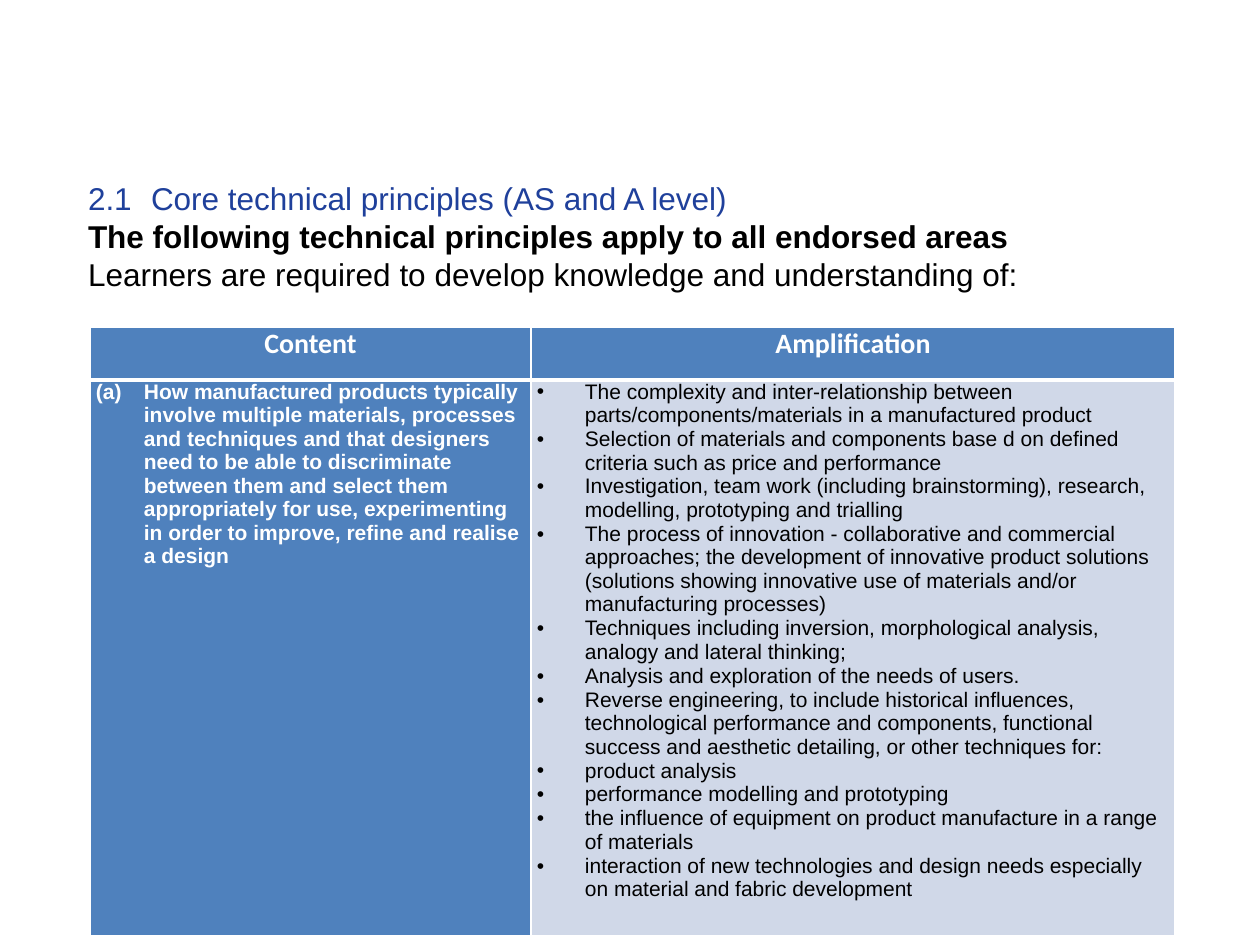
from dataclasses import dataclass

from lxml.etree import SubElement
from pptx import Presentation
from pptx.dml.color import RGBColor
from pptx.enum.text import MSO_ANCHOR, MSO_AUTO_SIZE, PP_ALIGN
from pptx.oxml.ns import qn
from pptx.util import Emu, Pt


@dataclass(frozen=True)
class Theme:
    white: str = "FFFFFF"
    black: str = "000000"
    heading: str = "1F409B"
    blue: str = "4F81BD"
    pale: str = "D0D8E8"
    body_font: str = "Arial"
    header_font: str = "Calibri"
    title_size: int = 18
    header_size: int = 16
    body_size: int = 12


@dataclass(frozen=True)
class TextStyle:
    font: str
    size: int
    color: str
    bold: bool = False
    align: PP_ALIGN = PP_ALIGN.LEFT
    spacing: float = 0
    bullet: tuple[str, str, str] | None = None


@dataclass(frozen=True)
class CellContent:
    lines: list[str]
    style: TextStyle
    fill: str
    top_border: int
    bottom_border: int


THEME = Theme()
BULLET_INDENT = 48
HEADER = TextStyle(THEME.header_font, THEME.header_size, THEME.white, True, PP_ALIGN.CENTER, 2)
CONTENT = TextStyle(THEME.body_font, THEME.body_size, THEME.white, True, spacing=0.1,
                    bullet=("a:buAutoNum", "type", "alphaLcParenBoth"))
AMPLIFICATION = TextStyle(THEME.body_font, THEME.body_size, THEME.black, spacing=0.1,
                          bullet=("a:buChar", "char", "•"))

TITLE_LINES = [
    ("2.1\tCore technical principles (AS and A level)", THEME.heading, False),
    ("The following technical principles apply to all endorsed areas", THEME.black, True),
    ("Learners are required to develop knowledge and understanding of:", THEME.black, False),
]
CONTENT_LINES = [
    "How manufactured products typically involve multiple materials, processes and techniques "
    "and that designers need to be able to discriminate between them and select them "
    "appropriately for use, experimenting in order to improve, refine and realise a design",
]
AMPLIFICATION_LINES = [
    "The complexity and inter-relationship between parts/components/materials in a "
    "manufactured product",
    "Selection of materials and components base d on defined criteria such as price and "
    "performance",
    "Investigation, team work (including brainstorming), research, modelling, prototyping "
    "and trialling",
    "The process of innovation - collaborative and commercial approaches; the development of "
    "innovative product solutions (solutions showing innovative use of materials and/or "
    "manufacturing processes)",
    "Techniques including inversion, morphological analysis, analogy and lateral thinking;",
    "Analysis and exploration of the needs of users.",
    "Reverse engineering, to include historical influences, technological performance and "
    "components, functional success and aesthetic detailing, or other techniques for:",
    "product analysis",
    "performance modelling and prototyping",
    "the influence of equipment on product manufacture in a range of materials",
    "interaction of new technologies and design needs especially on material and fabric "
    "development",
]
COLUMN_WIDTHS = [441, 644]
ROW_HEIGHTS = [53, 556]
ROWS = [
    [CellContent([label], HEADER, THEME.blue, 1, 3) for label in ("Content", "Amplification")],
    [CellContent(CONTENT_LINES, CONTENT, THEME.blue, 3, 1),
     CellContent(AMPLIFICATION_LINES, AMPLIFICATION, THEME.pale, 3, 1)],
]


def px(length: int) -> Emu:
    """Convert pixels, 126 to the inch, to EMU."""
    return Emu(round(length * 914400 / 126))


def write_lines(text_frame, lines: list[tuple[str, TextStyle]]) -> None:
    for index, (text, style) in enumerate(lines):
        paragraph = text_frame.paragraphs[0] if index == 0 else text_frame.add_paragraph()
        paragraph.text = text
        paragraph.alignment = style.align
        paragraph.space_before = Pt(style.spacing if index or style is HEADER else 0)
        paragraph.space_after = Pt(style.spacing)
        if style.bullet:
            add_bullet(paragraph, *style.bullet)
        paragraph.font.name = style.font
        paragraph.font.size = Pt(style.size)
        paragraph.font.bold = style.bold
        paragraph.font.color.rgb = RGBColor.from_string(style.color)


def add_bullet(paragraph, tag: str, attribute: str, value: str) -> None:
    properties = paragraph._p.get_or_add_pPr()
    properties.set("marL", str(px(BULLET_INDENT)))
    properties.set("indent", str(-px(BULLET_INDENT)))
    SubElement(properties, qn("a:buFont")).set("typeface", THEME.body_font)
    SubElement(properties, qn(tag)).set(attribute, value)


def add_borders(cell, top: int, bottom: int) -> None:
    properties = cell._tc.get_or_add_tcPr()
    for side, width in (("L", 1), ("R", 1), ("T", top), ("B", bottom)):
        line = SubElement(properties, qn(f"a:ln{side}"), w=str(Pt(width)))
        fill = SubElement(line, qn("a:solidFill"))
        SubElement(fill, qn("a:srgbClr"), val=THEME.white)


def fill_cell(cell, content: CellContent) -> None:
    cell.margin_left = cell.margin_right = px(6)
    cell.margin_top = cell.margin_bottom = 0
    cell.vertical_anchor = MSO_ANCHOR.TOP
    add_borders(cell, content.top_border, content.bottom_border)
    cell.fill.solid()
    cell.fill.fore_color.rgb = RGBColor.from_string(content.fill)
    write_lines(cell.text_frame, [(line, content.style) for line in content.lines])


def add_title(slide) -> None:
    title = slide.shapes.title
    title.left, title.top, title.width, title.height = px(76), px(173), px(1100), px(164)
    text_frame = title.text_frame
    text_frame.word_wrap = True
    text_frame.auto_size = MSO_AUTO_SIZE.NONE
    text_frame.vertical_anchor = MSO_ANCHOR.TOP
    text_frame.margin_left = text_frame.margin_right = px(12)
    text_frame.margin_top = text_frame.margin_bottom = px(6)
    write_lines(text_frame, [
        (text, TextStyle(THEME.body_font, THEME.title_size, color, bold))
        for text, color, bold in TITLE_LINES
    ])


def add_principles_table(slide) -> None:
    frame = slide.shapes.add_table(len(ROWS), len(COLUMN_WIDTHS), px(90), px(327),
                                   px(sum(COLUMN_WIDTHS)), px(sum(ROW_HEIGHTS)))
    table = frame.table
    for column, width in zip(table.columns, COLUMN_WIDTHS):
        column.width = px(width)
    for row, height, contents in zip(table.rows, ROW_HEIGHTS, ROWS):
        row.height = px(height)
        for cell, content in zip(row.cells, contents):
            fill_cell(cell, content)


def main() -> None:
    presentation = Presentation()
    presentation.slide_width, presentation.slide_height = px(1260), px(945)
    slide = presentation.slides.add_slide(presentation.slide_layouts.get_by_name("Title Only"))
    add_title(slide)
    add_principles_table(slide)
    presentation.save("out.pptx")


if __name__ == "__main__":
    main()
